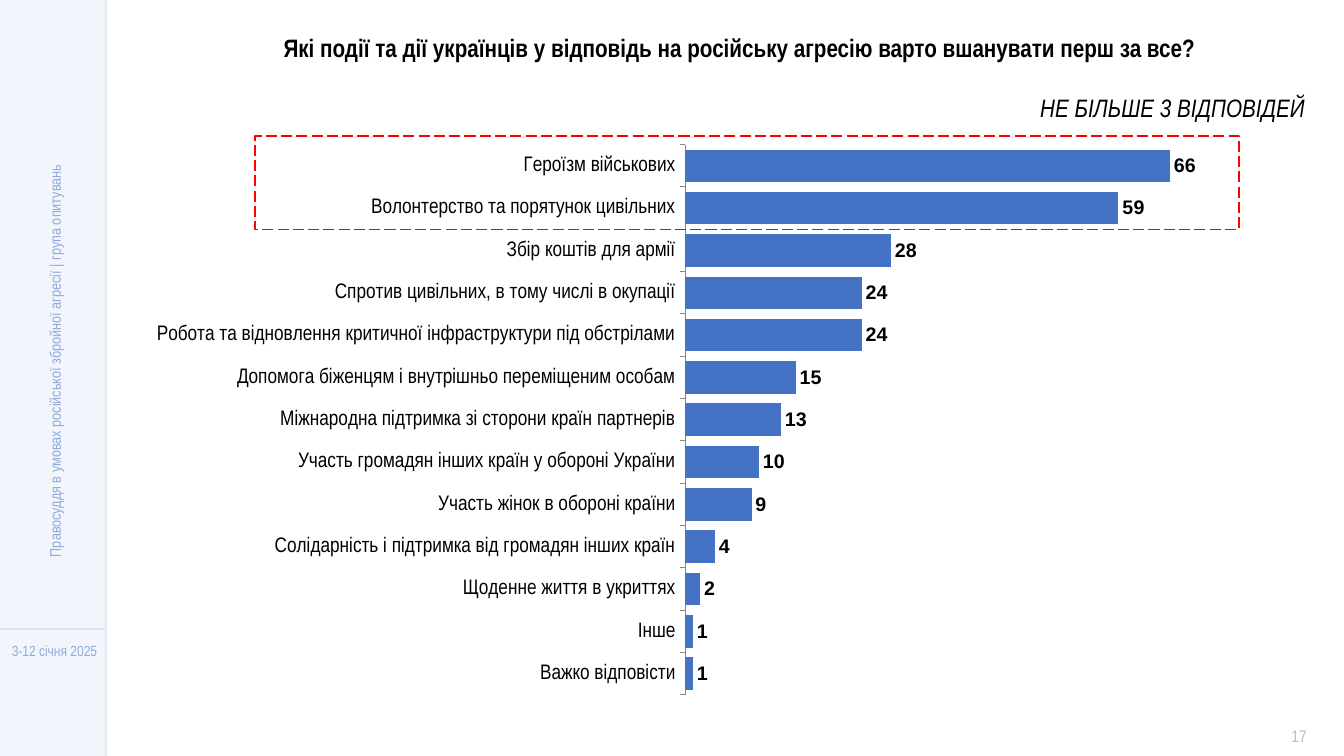
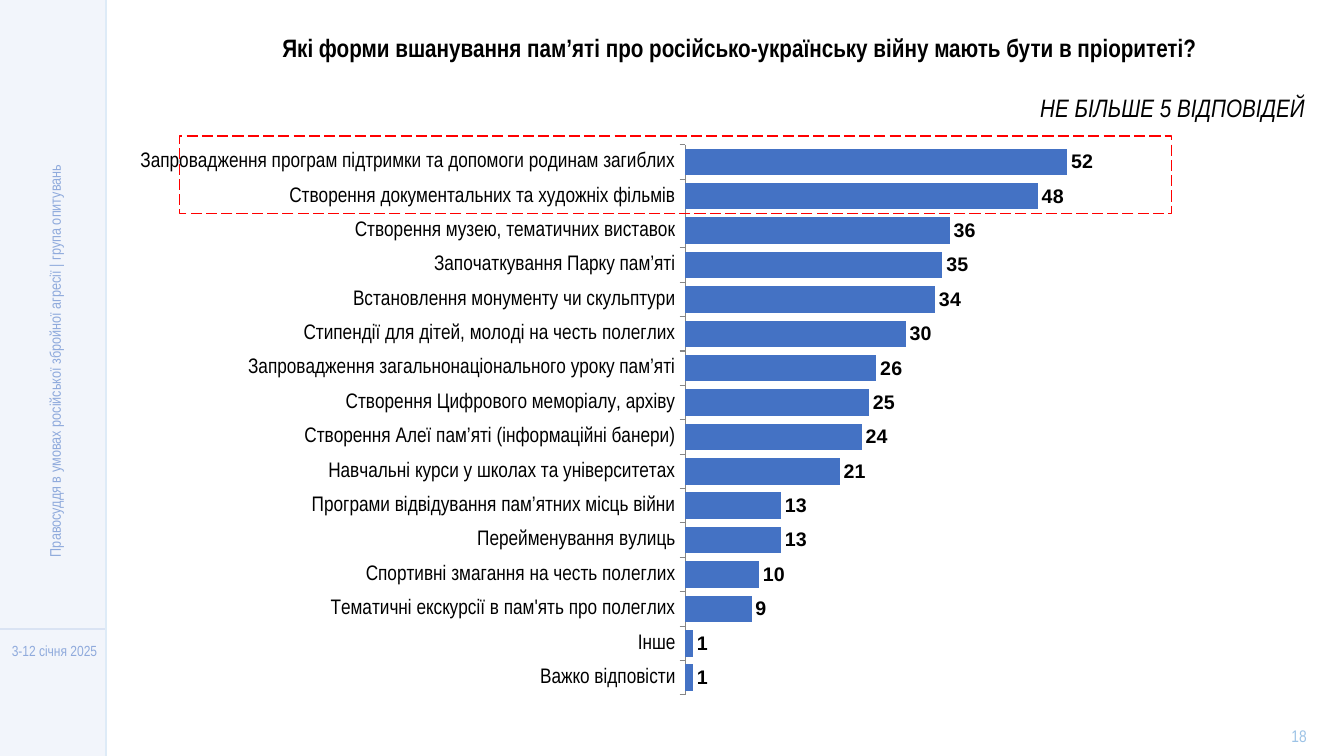
from dataclasses import dataclass

from lxml.etree import SubElement
from pptx import Presentation
from pptx.chart.data import CategoryChartData
from pptx.chart.plot import BarPlot
from pptx.dml.color import RGBColor
from pptx.enum.chart import XL_CHART_TYPE, XL_LABEL_POSITION, XL_TICK_MARK
from pptx.enum.dml import MSO_LINE
from pptx.enum.shapes import MSO_CONNECTOR, MSO_SHAPE
from pptx.enum.text import MSO_ANCHOR, MSO_AUTO_SIZE, PP_ALIGN
from pptx.oxml import parse_xml
from pptx.oxml.ns import nsdecls, qn
from pptx.slide import Slide
from pptx.text.text import Font, TextFrame
from pptx.util import Inches, Pt

WIDTH, HEIGHT = Inches(13.33), Inches(7.5)
COLORS = {
    "band": "DAE3F3",
    "spine": "DEEBF7",
    "caption": "8FAADC",
    "number": "9DC3E6",
    "text": "000000",
    "bar": "4472C4",
    "axis": "868686",
    "accent": "FF0000",
}
BODY_FONT, NARROW_FONT = "Arial", "Arial Narrow"


@dataclass(frozen=True)
class Area:
    """A rectangle in percent of the slide's width and height."""

    left: float
    top: float
    width: float
    height: float

    def box(self) -> tuple[int, int, int, int]:
        """Return left, top, width and height in EMU."""
        return (
            round(WIDTH * self.left / 100),
            round(HEIGHT * self.top / 100),
            round(WIDTH * self.width / 100),
            round(HEIGHT * self.height / 100),
        )


@dataclass(frozen=True)
class Caption:
    """A small label with its place and style."""

    text: str
    area: Area
    size: float
    color: str
    line_spacing: float | None = None
    rotation: int = 0


@dataclass(frozen=True)
class Poll:
    """One survey question with its answers and the span of its leaders."""

    number: int
    question: str
    limit: int
    leaders_left: float
    leaders_width: float
    answers: dict[str, int]


SIDEBAR = Area(0, 0, 7.88, 100)
DATE_RULE_Y = 83.2
HEADING = Area(12.23, 3.6, 85.6, 13.47)
CHART = Area(7.8, 6, 88.9, 87.6)
PLOT = {"x": 0.486, "y": 0.15, "w": 0.43, "h": 0.831}
LEADERS = 2
LEADERS_MARGIN = 1.14

SIDEBAR_CAPTIONS = (
    Caption("3-12 січня 2025", Area(0, 84.27, 8.1, 4), 10.5, "caption", 11),
    Caption(
        "Правосуддя в умовах російської збройної агресії | група опитувань",
        Area(-15.45, 45.73, 38.33, 4), 11, "caption", 20, 270,
    ),
)
NUMBER_AREA = Area(94.22, 95.87, 4.88, 2.93)

POLLS = (
    Poll(
        17,
        "Які події та дії українців у відповідь на російську агресію варто вшанувати перш за все?",
        3, 18.98, 73.22,
        {
            "Героїзм військових": 66,
            "Волонтерство та порятунок цивільних": 59,
            "Збір коштів для армії": 28,
            "Спротив цивільних, в тому числі в окупації": 24,
            "Робота та відновлення критичної інфраструктури під обстрілами": 24,
            "Допомога біженцям і внутрішньо переміщеним особам": 15,
            "Міжнародна підтримка зі сторони країн партнерів": 13,
            "Участь громадян інших країн у обороні України": 10,
            "Участь жінок в обороні країни": 9,
            "Солідарність і підтримка від громадян інших країн": 4,
            "Щоденне життя в укриттях": 2,
            "Інше": 1,
            "Важко відповісти": 1,
        },
    ),
    Poll(
        18,
        "Які форми вшанування пам’яті про російсько-українську війну мають бути в пріоритеті?",
        5, 13.35, 73.82,
        {
            "Запровадження програм підтримки та допомоги родинам загиблих": 52,
            "Створення документальних та художніх фільмів": 48,
            "Створення музею, тематичних виставок": 36,
            "Започаткування Парку пам’яті": 35,
            "Встановлення монументу чи скульптури": 34,
            "Стипендії для дітей, молоді на честь полеглих": 30,
            "Запровадження загальнонаціонального уроку пам’яті": 26,
            "Створення Цифрового меморіалу, архіву": 25,
            "Створення Алеї пам’яті (інформаційні банери)": 24,
            "Навчальні курси у школах та університетах": 21,
            "Програми відвідування пам’ятних місць війни": 13,
            "Перейменування вулиць": 13,
            "Спортивні змагання на честь полеглих": 10,
            "Тематичні екскурсії в пам'ять про полеглих": 9,
            "Інше": 1,
            "Важко відповісти": 1,
        },
    ),
)


def rgb(name: str) -> RGBColor:
    """Look up a palette colour."""
    return RGBColor.from_string(COLORS[name])


def style(font: Font, size: float, color: str, face: str = NARROW_FONT,
          bold: bool = False, italic: bool = False) -> None:
    """Apply face, size, colour and emphasis to a font."""
    font.name, font.size, font.bold, font.italic = face, Pt(size), bold, italic
    font.color.rgb = rgb(color)


def add_text_frame(slide: Slide, area: Area, rotation: int = 0) -> TextFrame:
    """Add a wrapping text box and return its frame."""
    holder = slide.shapes.add_textbox(*area.box())
    holder.rotation = rotation
    holder.text_frame.word_wrap = True
    return holder.text_frame


def add_caption(slide: Slide, caption: Caption) -> None:
    """Draw a centred small label."""
    frame = add_text_frame(slide, caption.area, caption.rotation)
    frame.vertical_anchor = MSO_ANCHOR.MIDDLE
    frame.margin_left = frame.margin_right = 0
    frame.text = caption.text
    line = frame.paragraphs[0]
    line.alignment = PP_ALIGN.CENTER
    if caption.line_spacing:
        line.line_spacing = Pt(caption.line_spacing)
    style(line.runs[0].font, caption.size, caption.color)


def add_rule(slide: Slide, start: tuple[float, float], end: tuple[float, float],
             color: str) -> None:
    """Draw a thin straight line between two points in percent."""
    points = (
        round(side * share / 100)
        for point in (start, end)
        for side, share in zip((WIDTH, HEIGHT), point)
    )
    rule = slide.shapes.add_connector(MSO_CONNECTOR.STRAIGHT, *points)
    rule.line.color.rgb = rgb(color)
    rule.line.width = Pt(1)
    SubElement(rule._element.spPr, qn("a:effectLst"))


def add_sidebar(slide: Slide, number: int) -> None:
    """Draw the shared side band, its captions and the page number."""
    band = slide.shapes.add_shape(MSO_SHAPE.RECTANGLE, *SIDEBAR.box())
    band.shadow.inherit = False
    band.fill.solid()
    band.fill.fore_color.rgb = rgb("band")
    tint = band._element.spPr.find(qn("a:solidFill"))[0]
    SubElement(tint, qn("a:alpha"), val="33000")
    band.line.fill.background()
    add_rule(slide, (SIDEBAR.width, DATE_RULE_Y), (0, DATE_RULE_Y), "band")
    add_rule(slide, (SIDEBAR.width, 0), (SIDEBAR.width, 100), "spine")
    for caption in SIDEBAR_CAPTIONS:
        add_caption(slide, caption)
    add_caption(slide, Caption(str(number), NUMBER_AREA, 12, "number"))


def add_heading(slide: Slide, poll: Poll) -> None:
    """Write the question and the limit on answers."""
    frame = add_text_frame(slide, HEADING)
    frame.auto_size = MSO_AUTO_SIZE.SHAPE_TO_FIT_TEXT
    frame.text = poll.question
    question = frame.paragraphs[0]
    question.alignment = PP_ALIGN.CENTER
    style(question.runs[0].font, 18, "text", bold=True)
    limit = frame.add_paragraph()
    limit.text = f"НЕ БІЛЬШЕ {poll.limit} ВІДПОВІДЕЙ"
    limit.alignment = PP_ALIGN.RIGHT
    limit.space_before = Pt(21.5)
    style(limit.runs[0].font, 18, "text", italic=True)


def fix_plot_area(plot: BarPlot) -> None:
    """Pin the inner plot area to its share of the chart."""
    plot_area = plot._element.getparent()
    for old in plot_area.findall(qn("c:layout")):
        plot_area.remove(old)
    modes = "".join(f'<c:{axis}Mode val="edge"/>' for axis in "xy")
    sizes = "".join(f'<c:{key} val="{share}"/>' for key, share in PLOT.items())
    plot_area.insert(0, parse_xml(
        f'<c:layout {nsdecls("c")}><c:manualLayout><c:layoutTarget val="inner"/>'
        f"{modes}{sizes}</c:manualLayout></c:layout>"
    ))


def add_answers_chart(slide: Slide, poll: Poll) -> None:
    """Draw the answers as a horizontal bar chart."""
    data = CategoryChartData(number_format="0")
    data.categories = list(poll.answers)
    data.add_series("Series 1", list(poll.answers.values()))
    chart = slide.shapes.add_chart(
        XL_CHART_TYPE.BAR_CLUSTERED, *CHART.box(), data
    ).chart
    chart.has_legend = chart.has_title = False
    style(chart.font, 18, "text", BODY_FONT)

    answers = chart.category_axis
    answers.reverse_order = True
    answers.has_major_gridlines = False
    answers.major_tick_mark = XL_TICK_MARK.OUTSIDE
    answers.minor_tick_mark = XL_TICK_MARK.NONE
    answers.format.line.color.rgb = rgb("axis")
    answers.format.line.width = Pt(0.75)
    style(answers.tick_labels.font, 15, "text")

    shares = chart.value_axis
    shares.minimum_scale, shares.maximum_scale = 0, 70
    shares.has_major_gridlines = shares.visible = False

    plot = chart.plots[0]
    plot.gap_width = 30
    plot.vary_by_categories = False
    bars = plot.series[0]
    bars.format.fill.solid()
    bars.format.fill.fore_color.rgb = rgb("bar")
    labels = bars.data_labels
    labels.show_value = True
    labels.number_format, labels.number_format_is_linked = "0", False
    labels.position = XL_LABEL_POSITION.OUTSIDE_END
    style(labels.font, 14, "text", BODY_FONT, bold=True)
    fix_plot_area(plot)


def add_leaders_frame(slide: Slide, poll: Poll) -> None:
    """Outline the top answers with a dashed frame."""
    row = CHART.height * PLOT["h"] / len(poll.answers)
    top = CHART.top + CHART.height * PLOT["y"] - LEADERS_MARGIN
    area = Area(poll.leaders_left, top, poll.leaders_width,
                row * LEADERS + LEADERS_MARGIN)
    frame = slide.shapes.add_shape(MSO_SHAPE.RECTANGLE, *area.box())
    frame.shadow.inherit = False
    frame.fill.background()
    frame.line.color.rgb = rgb("accent")
    frame.line.width = Pt(1)
    frame.line.dash_style = MSO_LINE.LONG_DASH


def main() -> None:
    """Build and save the presentation."""
    deck = Presentation()
    deck.slide_width, deck.slide_height = WIDTH, HEIGHT
    for poll in POLLS:
        slide = deck.slides.add_slide(deck.slide_layouts[6])
        add_sidebar(slide, poll.number)
        add_answers_chart(slide, poll)
        add_leaders_frame(slide, poll)
        add_heading(slide, poll)
    deck.save("out.pptx")


if __name__ == "__main__":
    main()
